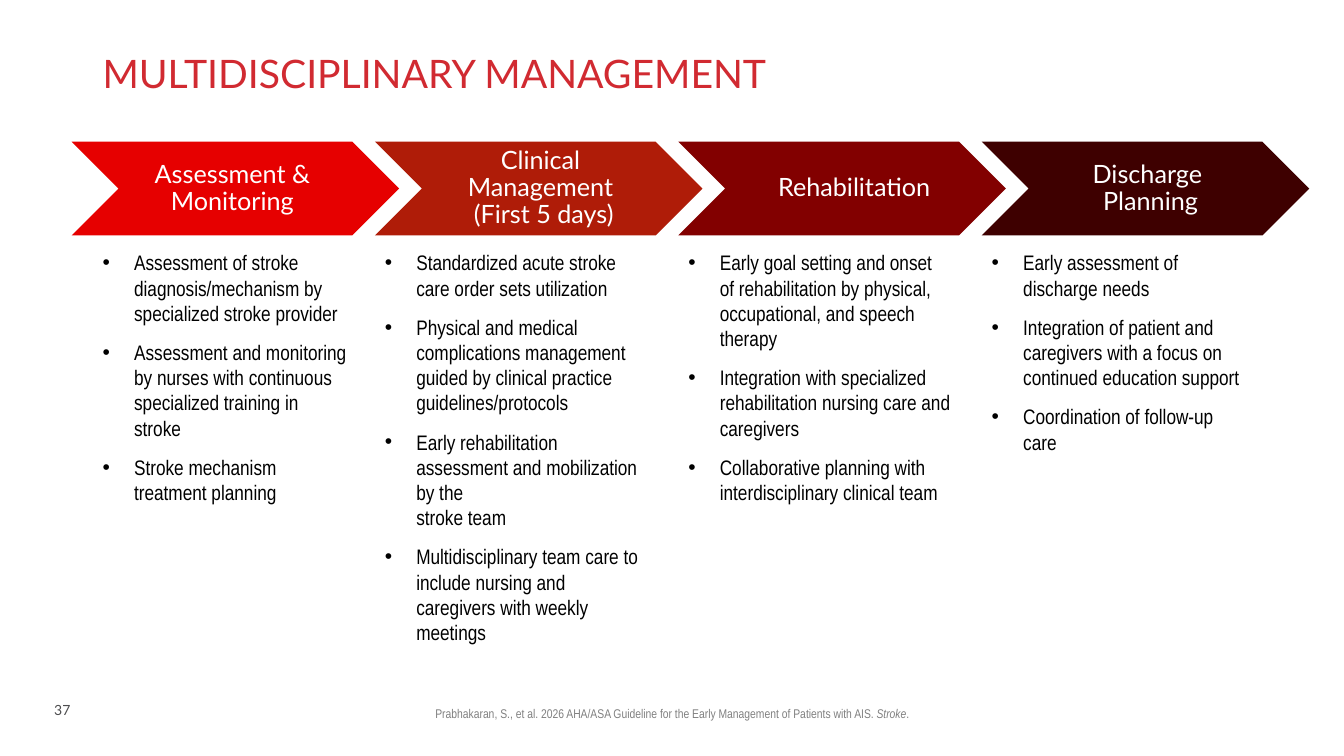
from lxml import etree
from pptx import Presentation
from pptx.dml.color import RGBColor
from pptx.enum import shapes, text
from pptx.oxml import ns
from pptx.util import Pt

HEADING = "MULTIDISCIPLINARY MANAGEMENT"
PAGE_NUMBER = "37"
CITATION = [
    ("Prabhakaran, S., et al. 2026 AHA/ASA Guideline for the Early "
     "Management of Patients with AIS. ", False),
    ("Stroke", True),
    (".", False),
]
# label, chevron colour, label (left, width), bullets (left, width), bullets
STAGES = [
    ("Assessment & Monitoring", "E60000", (100.8, 130.3), (66.2, 190.8), [
        "Assessment of stroke diagnosis/mechanism by specialized stroke provider",
        "Assessment and monitoring by nurses with continuous specialized training in stroke",
        "Stroke mechanism treatment planning",
    ]),
    ("Clinical \nManagement \n(First 5 days)", "AF1C08", (285.1, 206.6), (267.8, 197.3), [
        "Standardized acute stroke care order sets utilization",
        "Physical and medical complications management guided by clinical practice "
        "guidelines/protocols",
        "Early rehabilitation assessment and mobilization by the \nstroke team",
        "Multidisciplinary team care to include nursing and caregivers with weekly meetings",
    ]),
    ("Rehabilitation", "820000", (534.2, 151.9), (484.6, 201.6), [
        "Early goal setting and onset of rehabilitation by physical, occupational, "
        "and speech therapy",
        "Integration with specialized rehabilitation nursing care and caregivers",
        "Collaborative planning with interdisciplinary clinical team",
    ]),
    ("Discharge \nPlanning", "3E0000", (718.6, 206.6), (701.3, 195.8), [
        "Early assessment of discharge needs",
        "Integration of patient and caregivers with a focus on continued education support",
        "Coordination of follow-up care",
    ]),
]

CHEVRON_LEFT, CHEVRON_STEP = 51.1, 216.7
CHEVRON_TOP, CHEVRON_WIDTH, CHEVRON_HEIGHT = 101.2, 234, 67
BULLETS_TOP, BULLETS_HEIGHT, BULLET_INDENT = 175, 310, 22.5


def color(hex_code):
    return RGBColor.from_string(hex_code)


def add_text(left, top, width, height, anchor=text.MSO_ANCHOR.TOP, wrap=True):
    """Add an empty text box and return its text frame."""
    frame = slide.shapes.add_textbox(Pt(left), Pt(top), Pt(width), Pt(height)).text_frame
    frame.word_wrap = wrap
    frame.vertical_anchor = anchor
    return frame


def format_runs(paragraph, font_name, size, hex_code):
    for run in paragraph.runs:
        run.font.name = font_name
        run.font.size = Pt(size)
        run.font.color.rgb = color(hex_code)


def add_bullet(paragraph):
    """Give the paragraph a round bullet with a hanging indent."""
    properties = paragraph._p.get_or_add_pPr()
    properties.set("marL", str(Pt(BULLET_INDENT)))
    properties.set("indent", str(-Pt(BULLET_INDENT)))
    etree.SubElement(properties, ns.qn("a:buFont")).set("typeface", "Arial")
    etree.SubElement(properties, ns.qn("a:buChar")).set("char", "•")


def add_stage(index, label, fill, label_span, bullets_span, bullets):
    chevron = slide.shapes.add_shape(
        shapes.MSO_SHAPE.CHEVRON, Pt(CHEVRON_LEFT + index * CHEVRON_STEP),
        Pt(CHEVRON_TOP), Pt(CHEVRON_WIDTH), Pt(CHEVRON_HEIGHT))
    chevron.shadow.inherit = False
    chevron.fill.solid()
    chevron.fill.fore_color.rgb = color(fill)
    chevron.line.fill.background()

    left, width = label_span
    caption = add_text(left, CHEVRON_TOP, width, CHEVRON_HEIGHT,
                       text.MSO_ANCHOR.MIDDLE).paragraphs[0]
    caption.text = label
    caption.alignment = text.PP_ALIGN.CENTER
    caption.line_spacing = 0.9
    format_runs(caption, "Lato", 18, "FFFFFF")

    left, width = bullets_span
    frame = add_text(left, BULLETS_TOP, width, BULLETS_HEIGHT)
    for number, bullet in enumerate(bullets):
        item = frame.add_paragraph() if number else frame.paragraphs[0]
        item.text = bullet
        add_bullet(item)
        if number:
            item.space_before = Pt(10)
        format_runs(item, "Arial Narrow", 15, "000000")


deck = Presentation()
deck.slide_width, deck.slide_height = Pt(960), Pt(540)
slide = deck.slides.add_slide(deck.slide_layouts[6])

heading = add_text(66.2, 28.8, 869, 43.9, text.MSO_ANCHOR.BOTTOM).paragraphs[0]
heading.text = HEADING
heading.line_spacing = 0.9
format_runs(heading, "Lato", 28, "D12A31")

for index, stage in enumerate(STAGES):
    add_stage(index, *stage)

page_number = add_text(31.7, 497.5, 28, 19.4, wrap=False).paragraphs[0]
page_number.text = PAGE_NUMBER
format_runs(page_number, "Lato", 10, "4D4D4F")

citation = add_text(169.9, 500.4, 620.6, 18).paragraphs[0]
citation.alignment = text.PP_ALIGN.CENTER
for words, italic in CITATION:
    run = citation.add_run()
    run.text = words
    run.font.italic = italic
format_runs(citation, "Arial Narrow", 9, "808080")

deck.save("out.pptx")
